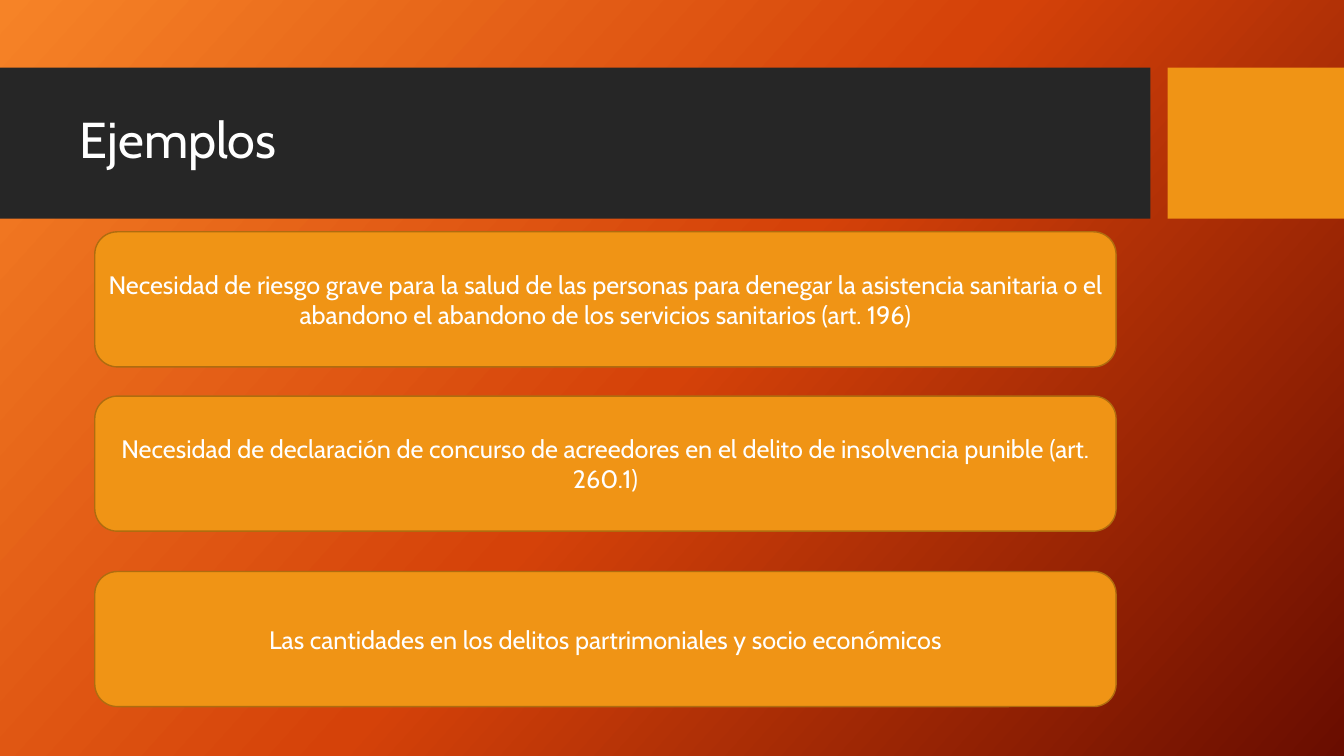
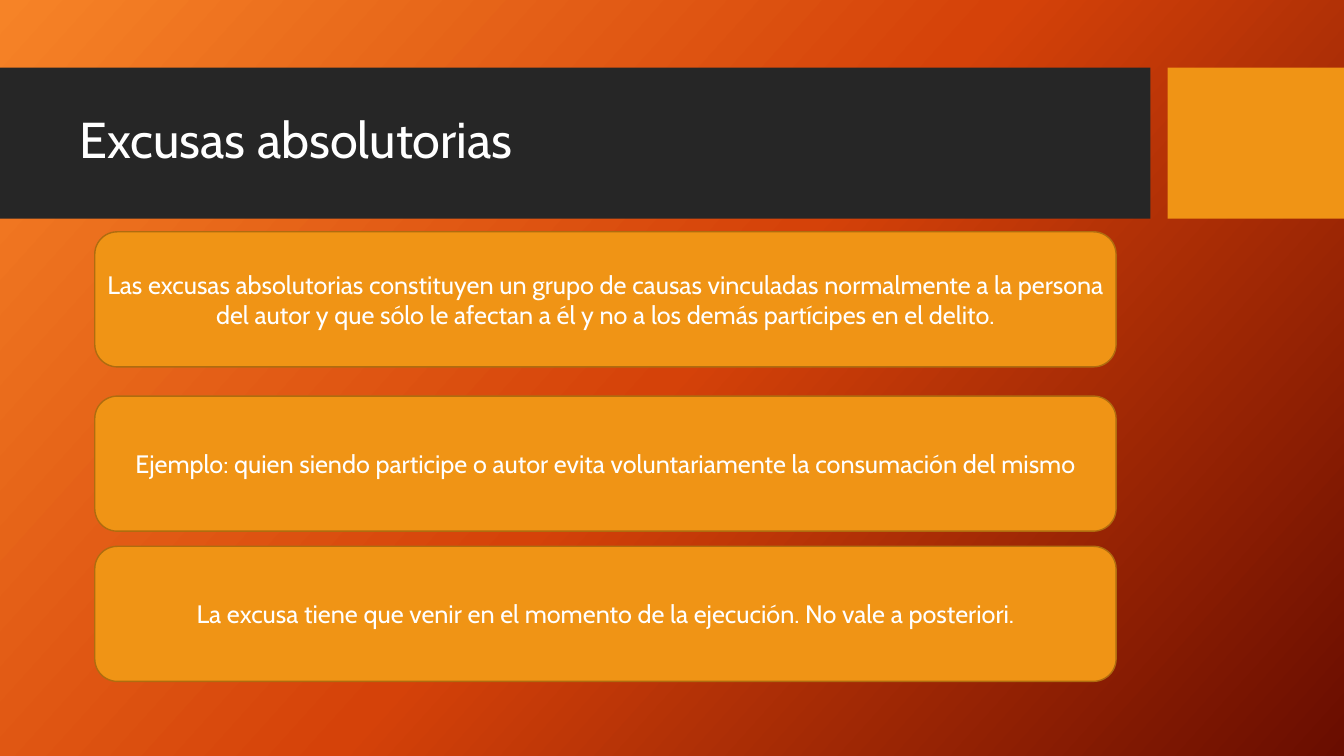
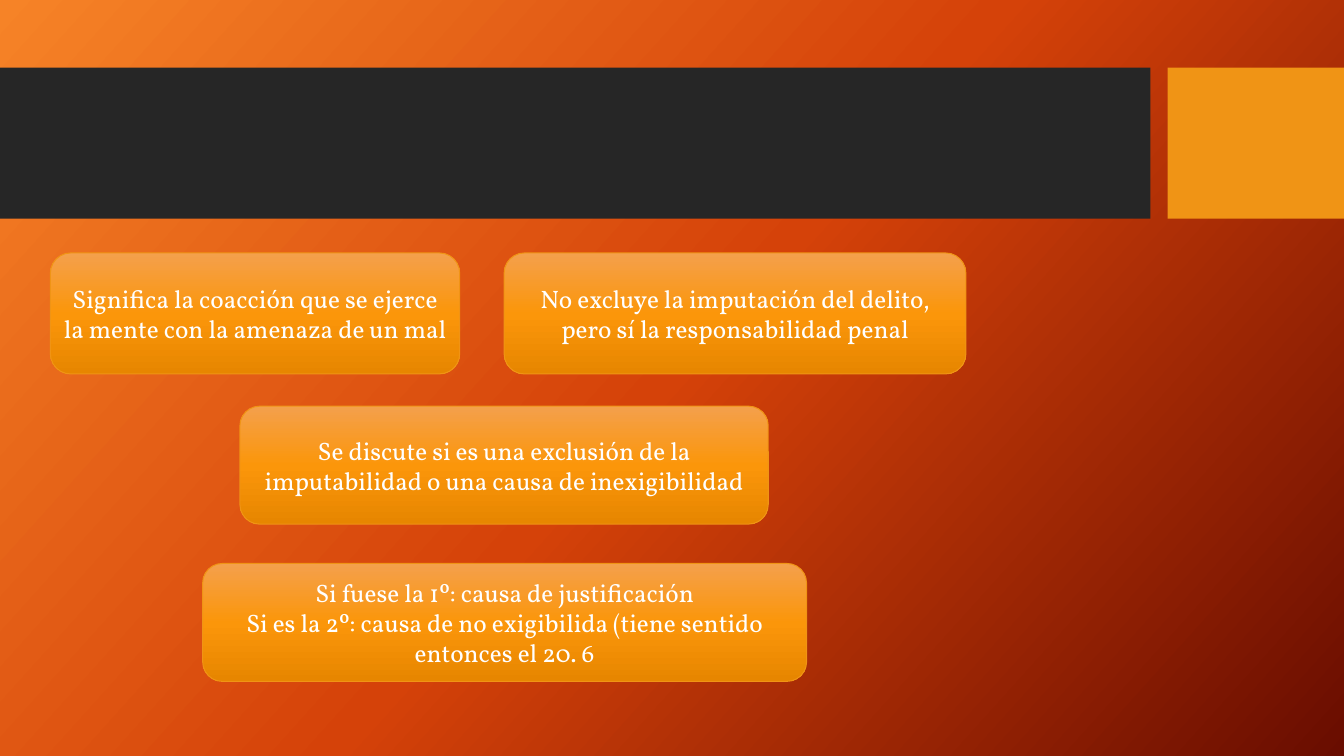
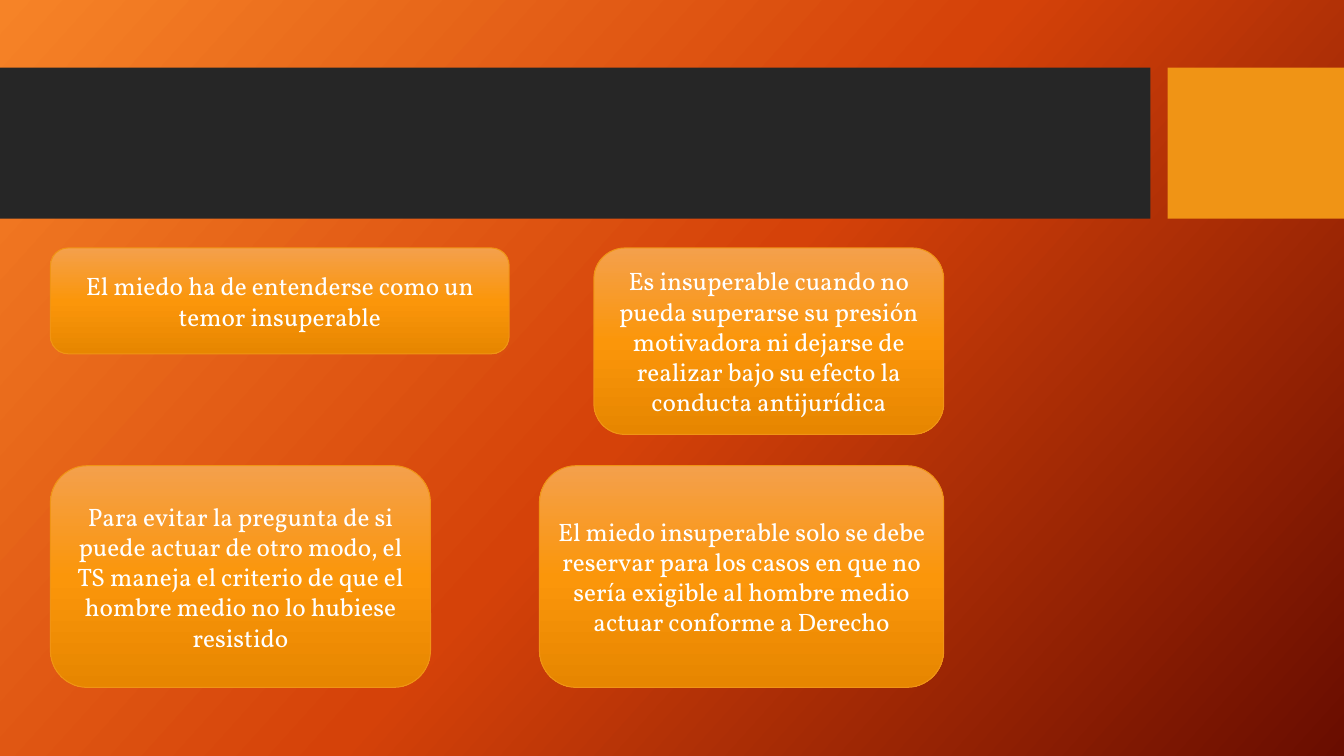
from lxml.etree import SubElement
from pptx import Presentation
from pptx.dml.color import RGBColor
from pptx.enum.shapes import MSO_SHAPE
from pptx.enum.text import MSO_ANCHOR, PP_ALIGN
from pptx.oxml.ns import qn
from pptx.util import Inches, Pt

# Colours
WHITE = RGBColor(0xFF, 0xFF, 0xFF)
DARK = RGBColor(0x26, 0x26, 0x26)
AMBER = RGBColor(0xF0, 0x94, 0x15)
BROWN = RGBColor(0xAF, 0x6C, 0x0F)
FLAME = [RGBColor(0xF6, 0x83, 0x27), RGBColor(0xD5, 0x42, 0x09), RGBColor(0x69, 0x0D, 0x00)]
GLOW = [RGBColor(0xF4, 0xA0, 0x4C), RGBColor(0xFB, 0x96, 0x0A), RGBColor(0xE7, 0x86, 0x00)]

# Text formats
PAD = Inches(0.05)
FRAME = {"word_wrap": True, "vertical_anchor": MSO_ANCHOR.MIDDLE,
         "margin_left": PAD, "margin_right": PAD, "margin_top": PAD, "margin_bottom": PAD}
TITLE = {"name": "Cabin", "size": Pt(36)}
PLAIN = {"name": "Cabin", "size": Pt(18)}
SERIF = {"name": "Vollkorn", "size": Pt(18)}

# Content: title and (top, text) of each bar
BARS = [
    ("Ejemplos", [
        (2.3, "Necesidad de riesgo grave para la salud de las personas para denegar la asistencia "
              "sanitaria o el abandono el abandono de los servicios sanitarios (art. 196)"),
        (3.93, "Necesidad de declaración de concurso de acreedores en el delito de insolvencia "
               "punible (art. 260.1)"),
        (5.67, "Las cantidades en los delitos partrimoniales y socio económicos")]),
    ("Excusas absolutorias", [
        (2.3, "Las excusas absolutorias constituyen un grupo de causas vinculadas normalmente a la "
              "persona del autor y que sólo le afectan a él y no a los demás partícipes en el delito."),
        (3.93, "Ejemplo: quien siendo participe o autor evita voluntariamente la consumación del mismo"),
        (5.42, "La excusa tiene que venir en el momento de la ejecución. No vale a posteriori.")]),
]

# Content: place and paragraphs of each card
CARDS = [
    [((0.5, 2.51, 4.06, 1.2),
      ["Significa la coacción que se ejerce la mente con la amenaza de un mal"]),
     ((5, 2.51, 4.58, 1.2),
      ["No excluye la imputación del delito, pero sí la responsabilidad penal"]),
     ((2.38, 4.03, 5.24, 1.17),
      ["Se discute si es una exclusión de la imputabilidad o una causa de inexigibilidad"]),
     ((2.01, 5.59, 5.99, 1.17),
      ["Si fuese la 1º: causa de justificación",
       "Si es la 2º: causa de no exigibilida (tiene sentido entonces el 20. 6"])],
    [((0.5, 2.46, 4.55, 1.05),
      ["El miedo ha de entenderse como un temor insuperable"]),
     ((5.89, 2.46, 3.47, 1.85),
      ["Es insuperable cuando no pueda superarse su presión motivadora ni dejarse de realizar "
       "bajo su efecto la conducta antijurídica"]),
     ((0.5, 4.62, 3.77, 2.2),
      ["Para evitar la pregunta de si puede actuar de otro modo, el TS maneja el criterio de que "
       "el hombre medio no lo hubiese resistido"]),
     ((5.35, 4.62, 4.01, 2.2),
      ["El miedo insuperable solo se debe reservar para los casos en que no sería exigible al "
       "hombre medio actuar conforme a Derecho"])],
]


def apply(obj, form):
    for key, value in form.items():
        setattr(obj, key, value)


def blend(fill, node, tones, angle):
    """Fill with evenly spaced tones; the angle runs clockwise."""
    fill.gradient()
    fill.gradient_angle = 360 - angle
    stops = node.find(".//" + qn("a:gsLst"))
    stops.clear()
    for i, tone in enumerate(tones):
        stop = SubElement(stops, qn("a:gs"), pos=str(100000 * i // (len(tones) - 1)))
        SubElement(stop, qn("a:srgbClr"), val=str(tone))


def write(shape, lines, form, align, space=1.0):
    frame = shape.text_frame
    apply(frame, FRAME)
    frame.text = "\n".join(lines)
    for para in frame.paragraphs:
        apply(para, {"alignment": align, "line_spacing": space})
        apply(para.font, form)
        para.font.color.rgb = WHITE


def block(slide, kind, box, tone=AMBER):
    shape = slide.shapes.add_shape(kind, *map(Inches, box))
    shape.shadow.inherit = False
    shape.fill.solid()
    shape.fill.fore_color.rgb = tone
    shape.line.fill.background()
    return shape


def panel(slide, box, lines, form, edge, width):
    shape = block(slide, MSO_SHAPE.ROUNDED_RECTANGLE, box)
    shape.line.color.rgb = edge
    shape.line.width = Pt(width)
    write(shape, lines, form, PP_ALIGN.CENTER)
    return shape


def bar(slide, top, text):
    panel(slide, (0.94, top, 10.13, 1.34), [text], PLAIN, BROWN, 1)


def card(slide, box, lines):
    shape = panel(slide, box, lines, SERIF, AMBER, 0.75)
    blend(shape.fill, shape.element.spPr, GLOW, 90)


def start(deck, title=None):
    """Add a slide with its bands and, if given, its title."""
    slide = deck.slides.add_slide(deck.slide_layouts[6])
    block(slide, MSO_SHAPE.RECTANGLE, (0, 0.67, 11.41, 1.5), DARK)
    block(slide, MSO_SHAPE.RECTANGLE, (11.58, 0.67, 1.75, 1.5))
    if title:
        head = slide.shapes.add_textbox(*map(Inches, (0.74, 0.82, 10.51, 1.18)))
        write(head, [title], TITLE, PP_ALIGN.LEFT, 0.9)
    return slide


def main():
    deck = Presentation()
    apply(deck, {"slide_width": Inches(13.33), "slide_height": Inches(7.5)})
    # Shared background
    master = deck.slide_master
    blend(master.background.fill, master.element, FLAME, 42)

    for title, bars in BARS:
        slide = start(deck, title)
        for top, text in bars:
            bar(slide, top, text)

    for cards in CARDS:
        slide = start(deck)
        for box, lines in cards:
            card(slide, box, lines)

    deck.save("out.pptx")


if __name__ == "__main__":
    main()
